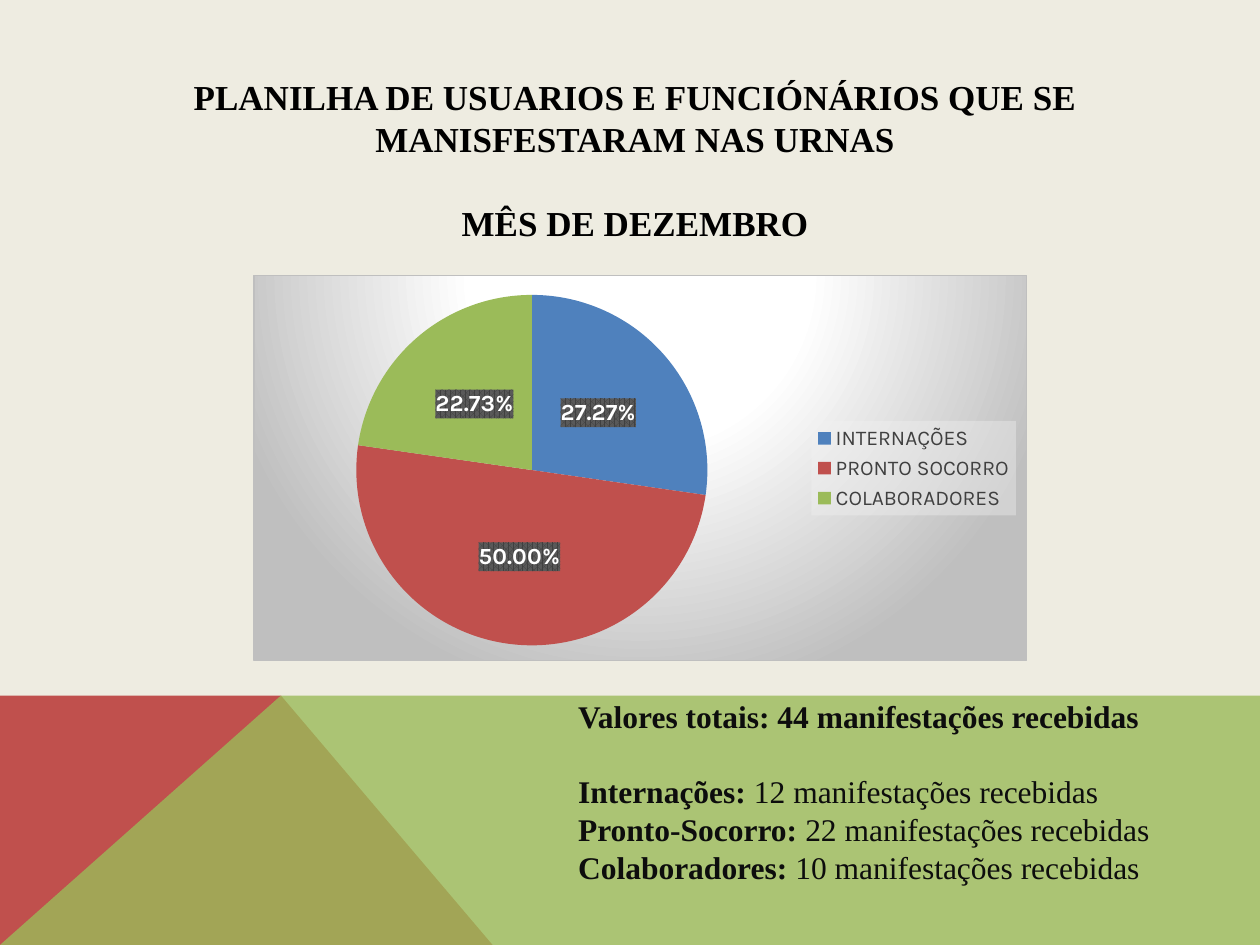
from pptx import Presentation
from pptx.chart.data import CategoryChartData
from pptx.dml.color import RGBColor as Rgb
from pptx.enum.chart import XL_CHART_TYPE as ChartType
from pptx.enum.chart import XL_LABEL_POSITION as LabelPosition
from pptx.enum.chart import XL_LEGEND_POSITION as LegendPosition
from pptx.enum.text import MSO_ANCHOR as Anchor
from pptx.enum.text import PP_ALIGN as Align
from pptx.oxml import parse_xml
from pptx.oxml.ns import nsdecls, qn
from pptx.util import Inches, Pt

WIDTH, HEIGHT = Inches(10), Inches(7.5)
SERIF, SANS = "Times New Roman", "Karla"
COLORS = {
    "paper": "EEECE1", "blue": "4F81BD", "red": "C0504D", "green": "9BBB59",
    "black": "000000", "ink": "0D0D0D", "legend": "404040", "white": "FFFFFF",
    "gray": "BFBFBF", "pale": "F2F2F2", "label": "595959",
}
TITLE = ["PLANILHA DE USUARIOS E FUNCIÓNÁRIOS QUE SE MANISFESTARAM NAS URNAS",
         "MÊS DE DEZEMBRO"]
SHARES = [("INTERNAÇÕES", 27.27, "blue"), ("PRONTO SOCORRO", 50, "red"),
          ("COLABORADORES", 22.73, "green")]
TOTALS = [("Valores totais: 44 manifestações recebidas", ""),
          ("Internações: ", "12 manifestações recebidas"),
          ("Pronto-Socorro: ", "22 manifestações recebidas"),
          ("Colaboradores: ", "10 manifestações recebidas")]


def share_box(left, top, width, height):
    return (int(WIDTH * left), int(HEIGHT * top),
            int(WIDTH * width), int(HEIGHT * height))


def add_span(para, text, size, color, bold):
    span = para.add_run()
    span.text = text
    span.font.name, span.font.size, span.font.bold = SERIF, Pt(size), bold
    span.font.color.rgb = Rgb.from_string(COLORS[color])


def add_paras(frame, count, align, gap):
    frame.word_wrap = True
    frame.vertical_anchor = Anchor.TOP
    for index in range(count):
        para = frame.paragraphs[0] if index == 0 else frame.add_paragraph()
        para.alignment = align
        para.line_spacing = 1.0
        para.space_before = Pt(gap if index == 1 else 0)
        yield para


def add_polygon(page, box, points, color, alpha=None):
    left, top, width, height = box
    corners = [(int(left + x * width), int(top + y * height)) for x, y in points]
    builder = page.shapes.build_freeform(*corners[0])
    builder.add_line_segments(corners[1:], close=True)
    shape = builder.convert_to_shape()
    shape.shadow.inherit = False
    shape.fill.solid()
    shape.fill.fore_color.rgb = Rgb.from_string(COLORS[color])
    shape.line.fill.background()
    if alpha:
        tone = shape.element.spPr.find(qn("a:solidFill"))[0]
        tone.append(parse_xml(f'<a:alpha {nsdecls("a")} val="{alpha * 1000}"/>'))


def add_band(page, box):
    peak = (0.223, 0)
    add_polygon(page, box, [(0, 1), (0, 0), peak, (0.391, 1)], "red")
    add_polygon(page, box, [(0, 1), peak, (1, 0), (1, 1)], "green", 80)


def add_title(page, box):
    title = page.shapes.title
    title.left, title.top, title.width, title.height = box
    paras = add_paras(title.text_frame, len(TITLE), Align.CENTER, 24)
    for para, text in zip(paras, TITLE):
        add_span(para, text, 20, "black", True)


def add_totals(page, box):
    frame = page.shapes.add_textbox(*box).text_frame
    paras = add_paras(frame, len(TOTALS), Align.JUSTIFY, 21.5)
    for para, (label, value) in zip(paras, TOTALS):
        add_span(para, label, 18, "ink", True)
        if value:
            add_span(para, value, 18, "ink", False)


def chart_format(content):
    return parse_xml(f'<c:spPr {nsdecls("c", "a")}>{content}</c:spPr>')


def style_font(font, size, color, bold=False):
    font.name, font.size, font.bold = SANS, Pt(size), bold
    font.color.rgb = Rgb.from_string(COLORS[color])


def format_backgrounds(chart):
    root = chart.element
    stops = "".join(
        f'<a:gs pos="{spot * 1000}"><a:srgbClr val="{COLORS[color]}"/></a:gs>'
        for spot, color in [(0, "white"), (39, "white"), (100, "gray")])
    root.find(qn("c:chart")).addnext(chart_format(
        f'<a:gradFill><a:gsLst>{stops}</a:gsLst><a:path path="circle">'
        '<a:fillToRect l="50000" t="-80000" r="50000" b="180000"/></a:path>'
        f'</a:gradFill><a:ln w="9525"><a:solidFill><a:srgbClr val="{COLORS["gray"]}"/>'
        '</a:solidFill></a:ln>'))
    root.xpath(".//c:legend/c:overlay")[0].addnext(chart_format(
        f'<a:solidFill><a:srgbClr val="{COLORS["pale"]}"><a:alpha val="39000"/>'
        '</a:srgbClr></a:solidFill>'))
    root.xpath(".//c:dLbls/c:numFmt")[0].addnext(chart_format(
        f'<a:pattFill prst="pct75"><a:fgClr><a:srgbClr val="{COLORS["legend"]}"/>'
        f'</a:fgClr><a:bgClr><a:srgbClr val="{COLORS["label"]}"/></a:bgClr></a:pattFill>'))


def place_plot(chart, left, top, width, height):
    area = chart.element.xpath(".//c:plotArea")[0]
    for layout in area.findall(qn("c:layout")):
        area.remove(layout)
    sizes = "".join(f'<c:{tag} val="{value}"/>' for tag, value in
                    [("x", left), ("y", top), ("w", width), ("h", height)])
    area.insert(0, parse_xml(
        f'<c:layout {nsdecls("c")}><c:manualLayout><c:layoutTarget val="inner"/>'
        f'<c:xMode val="edge"/><c:yMode val="edge"/>{sizes}</c:manualLayout></c:layout>'))


def add_pie(page, box):
    data = CategoryChartData()
    data.categories = [name for name, _, _ in SHARES]
    data.add_series("Series 1", [value for _, value, _ in SHARES])
    chart = page.shapes.add_chart(ChartType.PIE, *box, data).chart
    style_font(chart.font, 10, "black")
    chart.has_title = False
    chart.has_legend = True
    chart.legend.position = LegendPosition.RIGHT
    chart.legend.include_in_layout = False
    style_font(chart.legend.font, 12, "legend")
    plot = chart.plots[0]
    plot.vary_by_categories = True
    for index, (_, _, color) in enumerate(SHARES):
        fill = plot.series[0].points[index].format.fill
        fill.solid()
        fill.fore_color.rgb = Rgb.from_string(COLORS[color])
    plot.has_data_labels = True
    labels = plot.data_labels
    labels.show_percentage, labels.show_value = True, False
    labels.number_format, labels.number_format_is_linked = "0.00%", False
    labels.position = LabelPosition.CENTER
    style_font(labels.font, 13.3, "white", True)
    format_backgrounds(chart)
    place_plot(chart, 0.13, 0.05, 0.46, 0.91)


def main():
    deck = Presentation()
    deck.slide_width, deck.slide_height = WIDTH, HEIGHT
    page = deck.slides.add_slide(deck.slide_layouts[5])
    page.background.fill.solid()
    page.background.fill.fore_color.rgb = Rgb.from_string(COLORS["paper"])
    add_band(page, share_box(0, 0.736, 1, 0.264))
    add_title(page, share_box(0.039, 0.073, 0.93, 0.237))
    add_totals(page, share_box(0.449, 0.731, 0.547, 0.216))
    add_pie(page, share_box(0.201, 0.291, 0.614, 0.409))
    deck.save("out.pptx")


if __name__ == "__main__":
    main()
